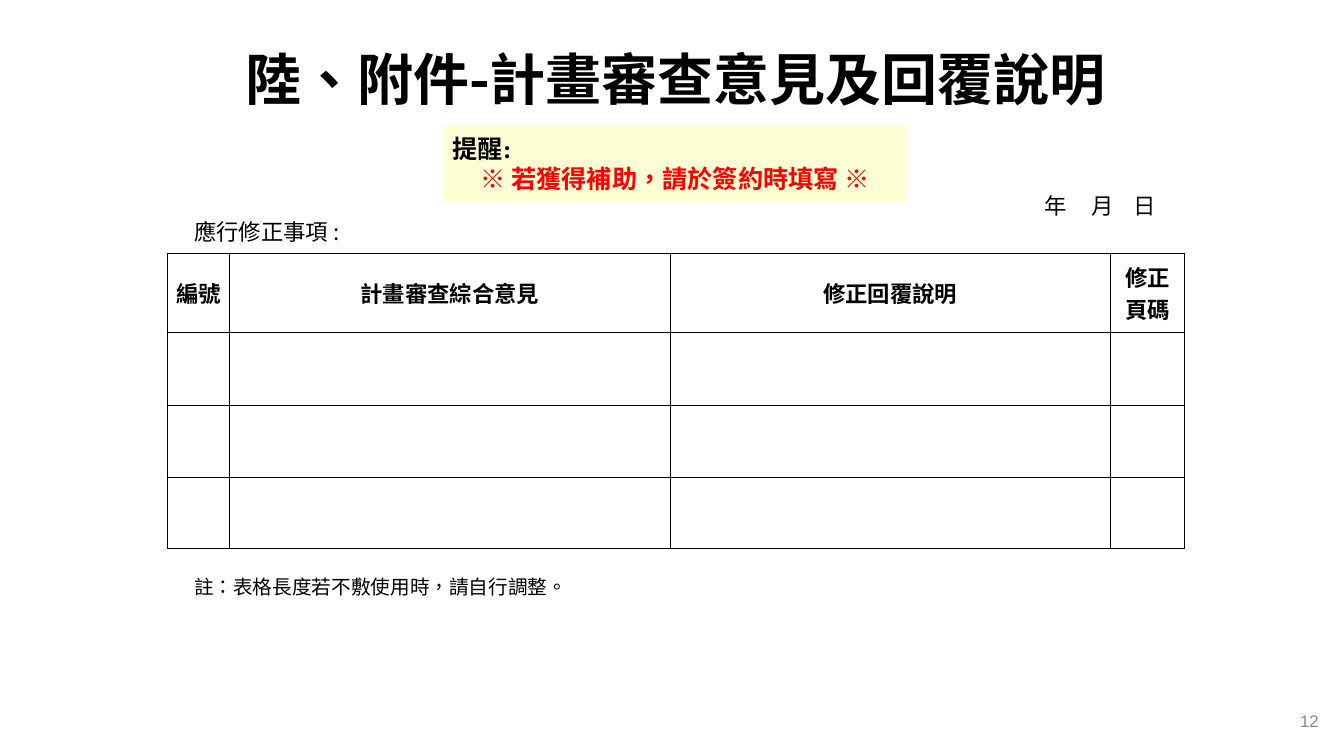
import dataclasses
import typing

import pptx
import pptx.dml.color
import pptx.enum.shapes
import pptx.enum.text
import pptx.oxml.ns
import pptx.oxml.xmlchemy
import pptx.util
from lxml import etree

Pt = pptx.util.Pt
Align = pptx.enum.text.PP_ALIGN
Anchor = pptx.enum.text.MSO_ANCHOR
qn = pptx.oxml.ns.qn

NOTO = "Noto Sans CJK SC"
TIMES = "Times New Roman"
COLUMN_WIDTHS = [44.6, 314.6, 314.6, 52.6]
ROW_HEIGHTS = [56.4, 52.1, 51.4, 50.8]
HEADINGS = ["編號", "計畫審查綜合意見", "修正回覆說明", "修正\n頁碼"]


@dataclasses.dataclass
class Run:
    text: str
    size: float
    font: str = NOTO
    bold: bool = False
    color: str = "000000"


@dataclasses.dataclass
class Line:
    runs: list[Run]
    align: Align = Align.LEFT
    spacing: typing.Optional[float] = None
    tabs: tuple[float, ...] = ()


@dataclasses.dataclass
class Label:
    left: float
    top: float
    width: float
    height: float
    line: Line


LABELS = [
    Label(746.4, 134, 100, 26, Line([Run("年\t月\t日", 16)], tabs=(33, 63.5))),
    Label(138.6, 152.6, 300, 26, Line([Run("應行修正事項 :", 16)])),
    Label(138.6, 406.2, 500, 26, Line([Run("註：表格長度若不敷使用時，請自行調整。", 14)])),
    Label(725, 500.4, 217, 28.8, Line([Run("12", 12, "Arial", color="898989")], Align.RIGHT)),
    Label(50.4, 26, 864, 60, Line([
        Run("陸、附件-", 40, bold=True),
        Run("計畫審查意見及回覆說明", 40, TIMES, True),
    ], Align.CENTER)),
]

REMINDER = [
    Line([Run("提醒:", 18, TIMES, True)], spacing=21.4),
    Line([Run("※ 若獲得補助，請於簽約時填寫 ※", 18, NOTO, True, "FF0000")], Align.CENTER, 21.4),
]


def rgb(value: str) -> pptx.dml.color.RGBColor:
    return pptx.dml.color.RGBColor.from_string(value)


def apply(target: typing.Any, values: dict[str, typing.Any]) -> None:
    for name, value in values.items():
        setattr(target, name, value)


def write_lines(frame: typing.Any, lines: list[Line]) -> None:
    for index, line in enumerate(lines):
        paragraph = frame.add_paragraph() if index else frame.paragraphs[0]
        paragraph.alignment = line.align
        if line.spacing:
            paragraph.line_spacing = Pt(line.spacing)
        if line.tabs:
            properties = paragraph._p.get_or_add_pPr()
            tab_list = etree.SubElement(properties, qn("a:tabLst"))
            for position in line.tabs:
                etree.SubElement(tab_list, qn("a:tab"), pos=str(Pt(position)), algn="l")
        for item in line.runs:
            run = paragraph.add_run()
            run.text = item.text
            apply(run.font, {"size": Pt(item.size), "bold": item.bold, "name": item.font})
            run.font.color.rgb = rgb(item.color)
            properties = run._r.get_or_add_rPr()
            properties.set("lang", "zh-TW")
            etree.SubElement(properties, qn("a:ea"), typeface=NOTO)


def add_label(slide: typing.Any, label: Label) -> None:
    box = slide.shapes.add_textbox(
        Pt(label.left), Pt(label.top), Pt(label.width), Pt(label.height))
    apply(box.text_frame, {
        "word_wrap": True, "vertical_anchor": Anchor.MIDDLE,
        "margin_left": 0, "margin_right": 0, "margin_top": 0, "margin_bottom": 0,
    })
    write_lines(box.text_frame, [label.line])


def add_borders(cell: typing.Any) -> None:
    properties = cell._tc.get_or_add_tcPr()
    for index, side in enumerate(("lnL", "lnR", "lnT", "lnB")):
        border = etree.Element(qn(f"a:{side}"), w=str(Pt(1)))
        fill = etree.SubElement(border, qn("a:solidFill"))
        etree.SubElement(fill, qn("a:srgbClr"), val="000000")
        properties.insert(index, border)


def add_review_table(slide: typing.Any) -> None:
    table = slide.shapes.add_table(
        len(ROW_HEIGHTS), len(COLUMN_WIDTHS), Pt(119.5), Pt(181.1),
        Pt(sum(COLUMN_WIDTHS)), Pt(sum(ROW_HEIGHTS))).table
    apply(table, {"first_row": False, "horz_banding": False})
    for column, width in zip(table.columns, COLUMN_WIDTHS):
        column.width = Pt(width)
    for row, height in zip(table.rows, ROW_HEIGHTS):
        row.height = Pt(height)
    for cell in table.iter_cells():
        cell.fill.solid()
        cell.fill.fore_color.rgb = rgb("FFFFFF")
        add_borders(cell)
    for cell, heading in zip(table.rows[0].cells, HEADINGS):
        apply(cell, {
            "vertical_anchor": Anchor.MIDDLE, "margin_left": Pt(1.4),
            "margin_right": Pt(1.4), "margin_top": 0, "margin_bottom": 0,
        })
        write_lines(cell.text_frame, [
            Line([Run(text, 16, bold=True)], Align.CENTER) for text in heading.split("\n")])


def add_reminder(slide: typing.Any) -> None:
    shape = slide.shapes.add_shape(
        pptx.enum.shapes.MSO_SHAPE.RECTANGLE, Pt(316.3), Pt(89.3), Pt(332), Pt(55.4))
    shape.shadow.inherit = False
    shape.line.fill.background()
    shape.fill.solid()
    shape.fill.fore_color.rgb = rgb("FFFFCC")
    color = shape._element.spPr.find(".//" + qn("a:srgbClr"))
    etree.SubElement(color, qn("a:alpha"), val="80000")
    apply(shape.text_frame, {
        "word_wrap": True, "vertical_anchor": Anchor.MIDDLE,
        "margin_left": Pt(7.2), "margin_right": Pt(7.2),
    })
    write_lines(shape.text_frame, REMINDER)


def main() -> None:
    presentation = pptx.Presentation()
    apply(presentation, {"slide_width": Pt(960), "slide_height": Pt(540)})
    slide = presentation.slides.add_slide(presentation.slide_layouts[6])
    add_review_table(slide)
    for label in LABELS:
        add_label(slide, label)
    add_reminder(slide)
    presentation.save("out.pptx")


if __name__ == "__main__":
    main()
